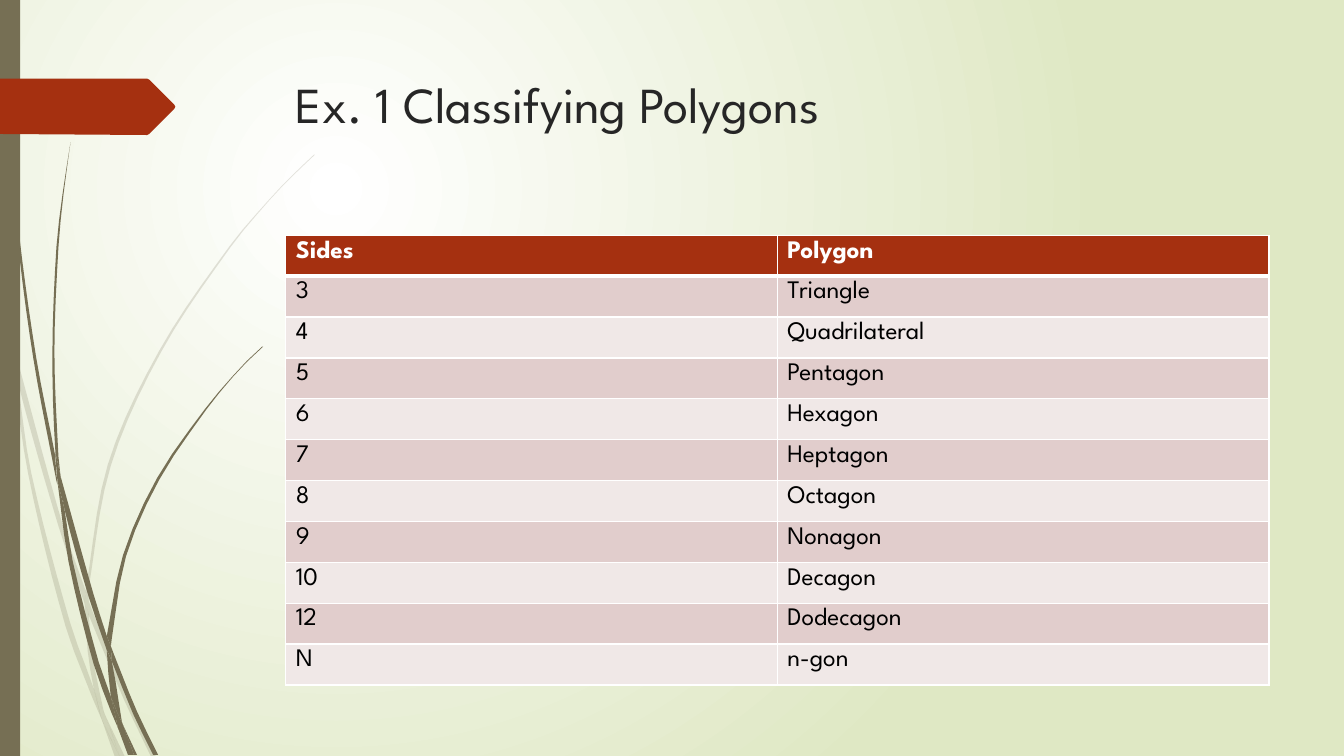
import dataclasses
import math

import pptx
import pptx.dml.color
import pptx.enum.shapes
import pptx.enum.text
import pptx.oxml
import pptx.oxml.ns
import pptx.oxml.xmlchemy
import pptx.shapes.autoshape
import pptx.slide
import pptx.table
import pptx.text.text
import pptx.util

Point = tuple[float, float]
Edge = list[Point]

COLORS = {
    "white": "FFFFFF",
    "pale green": "DFE8C4",
    "olive": "766F54",
    "rust": "A53010",
    "title": "262626",
    "black": "000000",
    "rose": "E1CDCC",
    "light rose": "F0E8E7",
}
FONT = "League Spartan"
CM_PER_UNIT = 2.54
CURVE_STEP = 0.3


@dataclasses.dataclass
class Stalk:
    opacity: int
    pieces: list[list[Edge]]


@dataclasses.dataclass
class PolygonRow:
    sides: str
    name: str


BACK_STALK = Stalk(20, [
    [[(0, 2.82), (0.09, 3.22), (0.11, 3.5)], [(0.1, 3.44), (0, 2.99)]],
    [[(0.14, 3.45), (0.62, 5.2), (0.85, 5.86)],
     [(0.84, 5.99), (0.58, 5.22), (0.17, 3.76), (0.14, 3.45)]],
    [[(0.88, 5.96), (0.92, 6.07), (1.27, 6.92), (1.55, 7.51)],
     [(1.5, 7.51), (1.23, 6.94), (0.88, 6.1)]],
    [[(1.05, 7.11), (1.24, 7.51)], [(1.19, 7.51), (1.05, 7.11)]],
    [[(0.11, 3.5), (0.17, 3.76), (0.31, 4.69), (0.7, 6.19), (0.93, 6.83), (1.01, 7.14)],
     [(0.92, 6.93), (0.65, 6.21), (0.28, 4.7), (0.11, 3.5)]],
    [[(0.84, 5.99), (0.88, 6.08), (0.91, 6.46), (1.03, 7.06), (1.05, 7.11)],
     [(0.96, 6.92), (0.93, 6.83), (0.87, 6.46), (0.84, 5.99)]],
    [[(0.85, 5.86), (1.07, 4.61), (1.58, 3.48), (2.28, 2.44), (2.68, 1.97),
      (2.89, 1.75), (3.12, 1.53)],
     [(3.12, 1.54), (2.9, 1.75), (2.68, 1.98), (2.29, 2.45), (1.6, 3.49),
      (1.1, 4.62), (0.88, 5.84), (0.88, 5.96)]],
    [[(1.01, 7.14), (1.19, 7.51)], [(1.14, 7.51), (1.01, 7.14)]],
    [[(0.85, 5.86), (0.88, 5.96), (0.88, 6.1)], [(0.88, 6.08), (0.84, 5.99)]],
    [[(0.93, 6.83), (0.96, 6.92), (1.05, 7.11), (1.19, 7.51)],
     [(1.19, 7.51), (1.01, 7.14), (0.99, 7.07), (0.93, 6.83)]],
])

FRONT_STALK = Stalk(100, [
    [[(0.03, 0), (0.04, 0.48), (0.07, 1.1), (0.17, 2.33), (0.33, 3.55), (0.56, 4.77),
      (0.57, 4.81)],
     [(0.55, 4.57), (0.55, 4.53), (0.36, 3.55), (0.19, 2.32), (0.08, 1.09),
      (0.05, 0.48), (0.04, 0)]],
    [[(0.6, 4.72), (0.93, 5.9), (1.06, 6.31)],
     [(1.06, 6.45), (0.88, 5.92), (0.64, 5.05), (0.6, 4.72)]],
    [[(1.1, 6.41), (1.13, 6.49), (1.36, 7.06), (1.57, 7.49)],
     [(1.52, 7.49), (1.32, 7.08), (1.11, 6.56)]],
    [[(0.57, 4.77), (0.64, 5.05), (0.72, 5.56), (0.98, 6.57), (1.1, 6.91), (1.17, 7.22)],
     [(1.11, 7.08), (0.93, 6.59), (0.68, 5.57), (0.57, 4.77)]],
    [[(0.6, 4.72), (0.58, 4.53), (0.54, 3.49), (0.58, 2.45), (0.63, 1.93), (0.7, 1.41)],
     [(0.7, 1.41), (0.62, 1.93), (0.56, 2.45), (0.52, 3.49), (0.55, 4.49), (0.6, 4.72)]],
    [[(1.22, 7.19), (1.36, 7.49)], [(1.33, 7.49), (1.22, 7.19)]],
    [[(0.55, 4.49), (0.6, 4.72), (0.64, 5.05)], [(0.57, 4.77), (0.55, 4.53)]],
    [[(1.06, 6.31), (1.22, 5.51), (1.56, 4.74), (2.04, 4.05), (2.31, 3.73),
      (2.45, 3.58), (2.6, 3.44)],
     [(2.61, 3.44), (2.45, 3.59), (2.31, 3.74), (2.05, 4.06), (1.58, 4.76),
      (1.25, 5.52), (1.11, 6.33), (1.1, 6.41)]],
    [[(1.17, 7.22), (1.31, 7.49)], [(1.27, 7.49), (1.17, 7.22)]],
    [[(1.06, 6.45), (1.11, 6.56), (1.21, 7.16), (1.22, 7.19)],
     [(1.16, 7.06), (1.1, 6.91), (1.06, 6.45)]],
    [[(1.06, 6.31), (1.1, 6.41), (1.11, 6.56)], [(1.09, 6.51), (1.06, 6.45)]],
    [[(1.1, 6.91), (1.16, 7.06), (1.22, 7.19), (1.33, 7.49)],
     [(1.3, 7.49), (1.17, 7.22), (1.16, 7.17), (1.1, 6.91)]],
])

ARROW = [(0, 0.78), (1.46, 0.78), (1.48, 0.79), (1.73, 1.04), (1.74, 1.06),
         (1.73, 1.08), (1.48, 1.33), (1.46, 1.34), (0, 1.33)]

POLYGONS = [
    PolygonRow("Sides", "Polygon"),
    PolygonRow("3", "Triangle"),
    PolygonRow("4", "Quadrilateral"),
    PolygonRow("5", "Pentagon"),
    PolygonRow("6", "Hexagon"),
    PolygonRow("7", "Heptagon"),
    PolygonRow("8", "Octagon"),
    PolygonRow("9", "Nonagon"),
    PolygonRow("10", "Decagon"),
    PolygonRow("12", "Dodecagon"),
    PolygonRow("N", "n-gon"),
]


def color(name: str) -> pptx.dml.color.RGBColor:
    return pptx.dml.color.RGBColor.from_string(COLORS[name])


def smooth(edge: Edge) -> Edge:
    lengths = [math.dist(a, b) for a, b in zip(edge, edge[1:])]
    slopes = []
    for i in range(len(edge)):
        before, after = max(i - 1, 0), min(i + 1, len(edge) - 1)
        span = sum(lengths[before:after])
        slopes.append([(b - a) / span for a, b in zip(edge[before], edge[after])])
    points = [edge[0]]
    for i, length in enumerate(lengths):
        steps = math.ceil(length / CURVE_STEP)
        for step in range(1, steps + 1):
            t = step / steps
            x, y = (
                (2 * t**3 - 3 * t**2 + 1) * edge[i][axis]
                + (3 * t**2 - 2 * t**3) * edge[i + 1][axis]
                + (t**3 - 2 * t**2 + t) * length * slopes[i][axis]
                + (t**3 - t**2) * length * slopes[i + 1][axis]
                for axis in (0, 1)
            )
            points.append((x, y))
    return points


def paint(shape: pptx.shapes.autoshape.Shape, name: str, opacity: int = 100) -> None:
    shape.shadow.inherit = False
    shape.line.fill.background()
    shape.fill.solid()
    shape.fill.fore_color.rgb = color(name)
    if opacity < 100:
        tint = shape.element.spPr.find(".//" + pptx.oxml.ns.qn("a:srgbClr"))
        alpha = pptx.oxml.xmlchemy.OxmlElement("a:alpha")
        alpha.set("val", str(opacity * 1000))
        tint.append(alpha)


def draw_outline(slide: pptx.slide.Slide, points: Edge, name: str, opacity: int = 100) -> None:
    lengths = [tuple(pptx.util.Cm(CM_PER_UNIT * value) for value in point) for point in points]
    builder = slide.shapes.build_freeform(*lengths[0])
    builder.add_line_segments(lengths[1:], close=True)
    paint(builder.convert_to_shape(), name, opacity)


def draw_stalk(slide: pptx.slide.Slide, stalk: Stalk) -> None:
    for piece in stalk.pieces:
        points = [point for edge in piece for point in smooth(edge)]
        draw_outline(slide, points, "olive", stalk.opacity)


def draw_background(slide: pptx.slide.Slide) -> None:
    fill = slide.background.fill
    fill.gradient()
    for stop, name in zip(fill.gradient_stops, ("white", "pale green")):
        stop.color.rgb = color(name)
    gradient = slide.element.find(".//" + pptx.oxml.ns.qn("a:gradFill"))
    gradient.remove(gradient.find(pptx.oxml.ns.qn("a:lin")))
    gradient.append(pptx.oxml.parse_xml(
        f'<a:path {pptx.oxml.ns.nsdecls("a")} path="circle">'
        '<a:fillToRect l="50000" t="50000" r="100000" b="100000"/></a:path>'
    ))


def write(frame: pptx.text.text.TextFrame, text: str, size: int, name: str,
          bold: bool = False) -> None:
    run = frame.paragraphs[0].add_run()
    run.text = text
    run.font.name = FONT
    run.font.size = pptx.util.Pt(size)
    run.font.bold = bold
    run.font.color.rgb = color(name)


def draw_title(slide: pptx.slide.Slide) -> None:
    box = slide.shapes.add_textbox(*map(pptx.util.Cm, (7.21, 1.73, 24.77, 3.56)))
    box.text_frame.word_wrap = True
    box.text_frame.vertical_anchor = pptx.enum.text.MSO_ANCHOR.TOP
    write(box.text_frame, "Ex. 1 Classifying Polygons", 36, "title")


def add_borders(cell: pptx.table._Cell, widths: dict[str, int]) -> None:
    properties = cell._tc.get_or_add_tcPr()
    for i, (side, width) in enumerate(widths.items()):
        properties.insert(i, pptx.oxml.parse_xml(
            f'<a:{side} {pptx.oxml.ns.nsdecls("a")} w="{pptx.util.Pt(width)}"><a:solidFill>'
            f'<a:srgbClr val="{COLORS["white"]}"/></a:solidFill></a:{side}>'
        ))


def draw_table(slide: pptx.slide.Slide) -> None:
    frame = slide.shapes.add_table(
        len(POLYGONS), 2, *map(pptx.util.Cm, (7.2, 5.93, 24.78, 11.33)))
    for column in frame.table.columns:
        column.width = pptx.util.Cm(12.39)
    for i, polygon in enumerate(POLYGONS):
        frame.table.rows[i].height = pptx.util.Cm(1.03)
        header = i == 0
        fill = "rust" if header else ("light rose", "rose")[i % 2]
        widths = {"lnL": 1, "lnR": 1, "lnT": 3 if i == 1 else 1, "lnB": 3 if header else 1}
        for cell, text in zip(frame.table.rows[i].cells, (polygon.sides, polygon.name)):
            cell.fill.solid()
            cell.fill.fore_color.rgb = color(fill)
            add_borders(cell, widths)
            write(cell.text_frame, text, 18, "white" if header else "black", header)


def main() -> None:
    presentation = pptx.Presentation()
    presentation.slide_width = pptx.util.Cm(33.87)
    presentation.slide_height = pptx.util.Cm(19.05)
    slide = presentation.slides.add_slide(presentation.slide_layouts[6])
    draw_background(slide)
    draw_stalk(slide, BACK_STALK)
    draw_stalk(slide, FRONT_STALK)
    side_bar = slide.shapes.add_shape(
        pptx.enum.shapes.MSO_SHAPE.RECTANGLE, 0, 0,
        pptx.util.Cm(0.51), presentation.slide_height)
    paint(side_bar, "olive")
    draw_outline(slide, ARROW, "rust")
    draw_title(slide)
    draw_table(slide)
    presentation.save("out.pptx")


if __name__ == "__main__":
    main()
